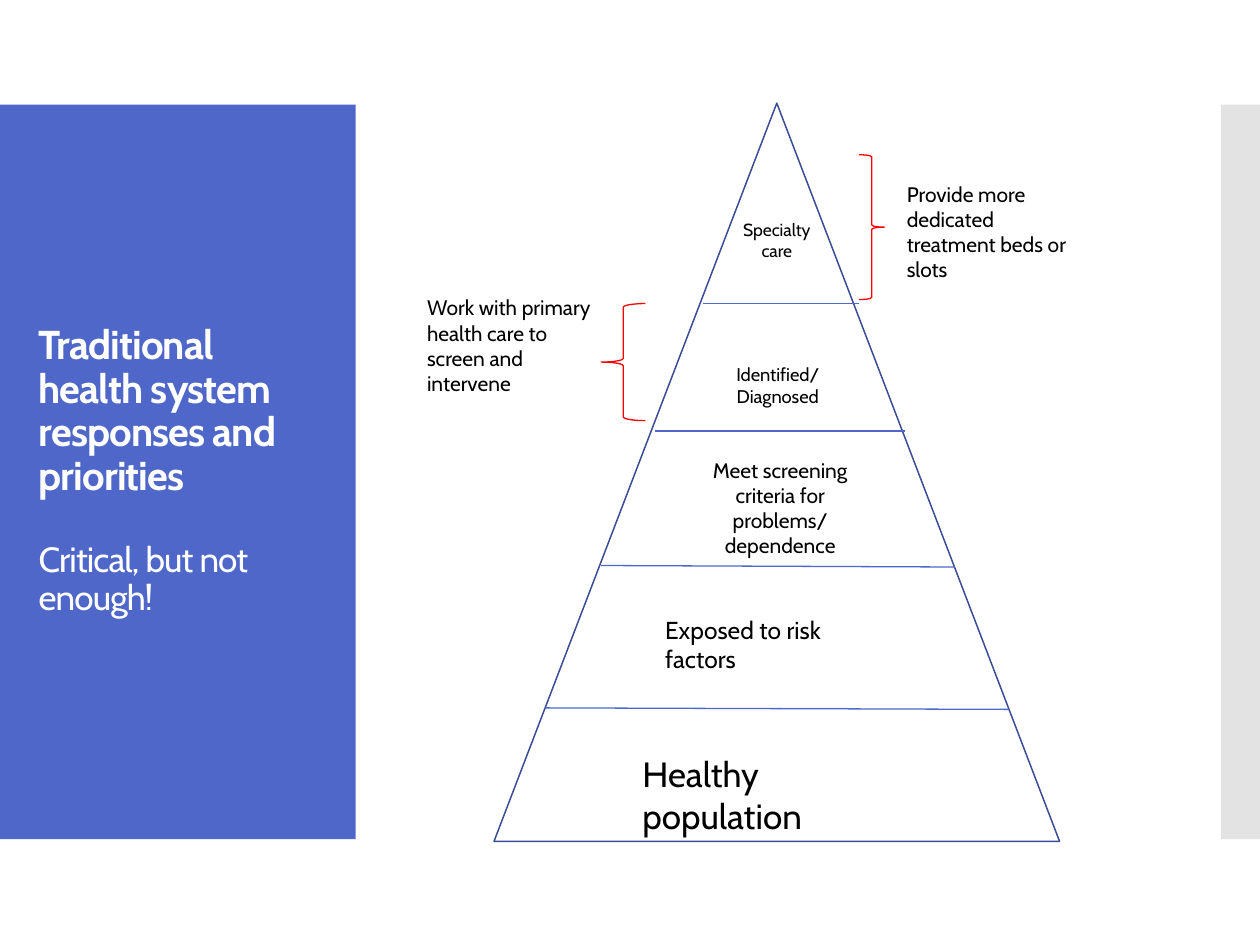
"""Build a slide with a five-level population health pyramid and two response notes."""
from dataclasses import dataclass

import pptx
import pptx.dml.color
import pptx.enum.shapes
import pptx.enum.text
import pptx.oxml
import pptx.oxml.ns
import pptx.util
from lxml import etree

Cm = pptx.util.Cm
Pt = pptx.util.Pt
RGB = pptx.dml.color.RGBColor
Shape = pptx.enum.shapes.MSO_SHAPE
Align = pptx.enum.text.PP_ALIGN
Anchor = pptx.enum.text.MSO_ANCHOR


@dataclass(frozen=True)
class Theme:
    font: str = "Cabin"
    panel: RGB = RGB(0x4E, 0x67, 0xC8)
    outline: RGB = RGB(0x3A, 0x4C, 0x94)
    strip: RGB = RGB(0xC8, 0xC8, 0xC8)
    brace: RGB = RGB(0xFF, 0, 0)
    ink: RGB = RGB(0, 0, 0)
    title_ink: RGB = RGB(0xFF, 0xFF, 0xFF)
    title: float = 23
    large: float = 20
    medium: float = 14
    note: float = 12
    small: float = 10.5
    tiny: float = 10


theme = Theme()
deck = pptx.Presentation()
deck.slide_width, deck.slide_height = Cm(25.4), Cm(19.05)
slide = deck.slides.add_slide(deck.slide_layouts[6])


def add_text(text, *, box, sizes, color=theme.ink, align=Align.LEFT, anchor=Anchor.TOP,
             bold_first=False, line_spacing=None, gap=0, tracking=None):
    frame = slide.shapes.add_textbox(*map(Cm, box)).text_frame
    frame.word_wrap = True
    frame.vertical_anchor = anchor
    for index, line in enumerate(text.split("\n")):
        paragraph = frame.paragraphs[0] if index == 0 else frame.add_paragraph()
        paragraph.alignment = align
        paragraph.line_spacing = line_spacing
        paragraph.space_before = Pt(gap if index else 0)
        run = paragraph.add_run()
        run.text = line
        run.font.name = theme.font
        run.font.size = Pt(sizes[min(index, len(sizes) - 1)])
        run.font.bold = bold_first and index == 0
        run.font.color.rgb = color
        if tracking is not None:
            run.font._element.set("spc", str(tracking))


def add_figure(kind, *, box, fill=None, line=None, width=0.75):
    figure = slide.shapes.add_shape(kind, *map(Cm, box))
    figure.shadow.inherit = False
    if fill is None:
        figure.fill.background()
    else:
        figure.fill.solid()
        figure.fill.fore_color.rgb = fill
    if line is None:
        figure.line.fill.background()
    else:
        figure.line.color.rgb = line
        figure.line.width = Pt(width)
    return figure


add_figure(Shape.RECTANGLE, box=(0, 2.11, 7.17, 14.81), fill=theme.panel)
strip = add_figure(Shape.RECTANGLE, box=(24.61, 2.11, 0.79, 14.81), fill=theme.strip)
strip_color = strip._element.spPr.find(".//" + pptx.oxml.ns.qn("a:srgbClr"))
etree.SubElement(strip_color, pptx.oxml.ns.qn("a:alpha"), val="50000")

add_text("Traditional health system responses and priorities\nCritical, but not enough!",
         box=(0.53, 3.12, 6.15, 12.78), sizes=(theme.title, theme.large),
         color=theme.title_ink, anchor=Anchor.MIDDLE, bold_first=True,
         line_spacing=0.9, gap=25, tracking=-50)

add_figure(Shape.ISOSCELES_TRIANGLE, box=(9.96, 2.08, 11.4, 14.88),
           line=theme.outline, width=0.85)

for left, left_y, right, right_y in (
    (11, 14.27, 20.32, 14.3),
    (12.12, 11.4, 19.25, 11.43),
    (13.21, 8.69, 18.24, 8.69),
    (14.17, 6.12, 17.32, 6.12),
):
    divider = slide.shapes.add_connector(
        pptx.enum.shapes.MSO_CONNECTOR.STRAIGHT, Cm(left), Cm(left_y), Cm(right), Cm(right_y))
    divider.line.color.rgb = theme.panel
    divider.line.width = Pt(0.75)
    etree.SubElement(divider._element.spPr, pptx.oxml.ns.qn("a:effectLst"))

for label, box, size, align in (
    ("Healthy population", (12.7, 15.04, 4.6, 2.2), theme.large, Align.LEFT),
    ("Exposed to risk factors", (13.16, 12.27, 4.2, 1.5), theme.medium, Align.LEFT),
    ("Meet screening\ncriteria for problems/\ndependence",
     (13.98, 9.09, 3.5, 2.3), theme.note, Align.CENTER),
    ("Identified/Diagnosed", (14.38, 7.19, 2.6, 1.2), theme.small, Align.CENTER),
    ("Specialty\ncare", (14.46, 4.29, 2.4, 1.12), theme.tiny, Align.CENTER),
    ("Work with primary\nhealth care to\nscreen and\nintervene",
     (8.36, 5.82, 4.1, 2.31), theme.note, Align.LEFT),
    ("Provide more dedicated\ntreatment beds or\nslots",
     (18.03, 3.53, 4.2, 2.31), theme.note, Align.LEFT),
):
    add_text(label, box=box, sizes=(size,), align=align)

for brace, box in (
    (Shape.LEFT_BRACE, (12.12, 6.12, 0.89, 2.36)),
    (Shape.RIGHT_BRACE, (17.32, 3.12, 0.51, 2.92)),
):
    add_figure(brace, box=box, line=theme.brace)

deck.save("out.pptx")
